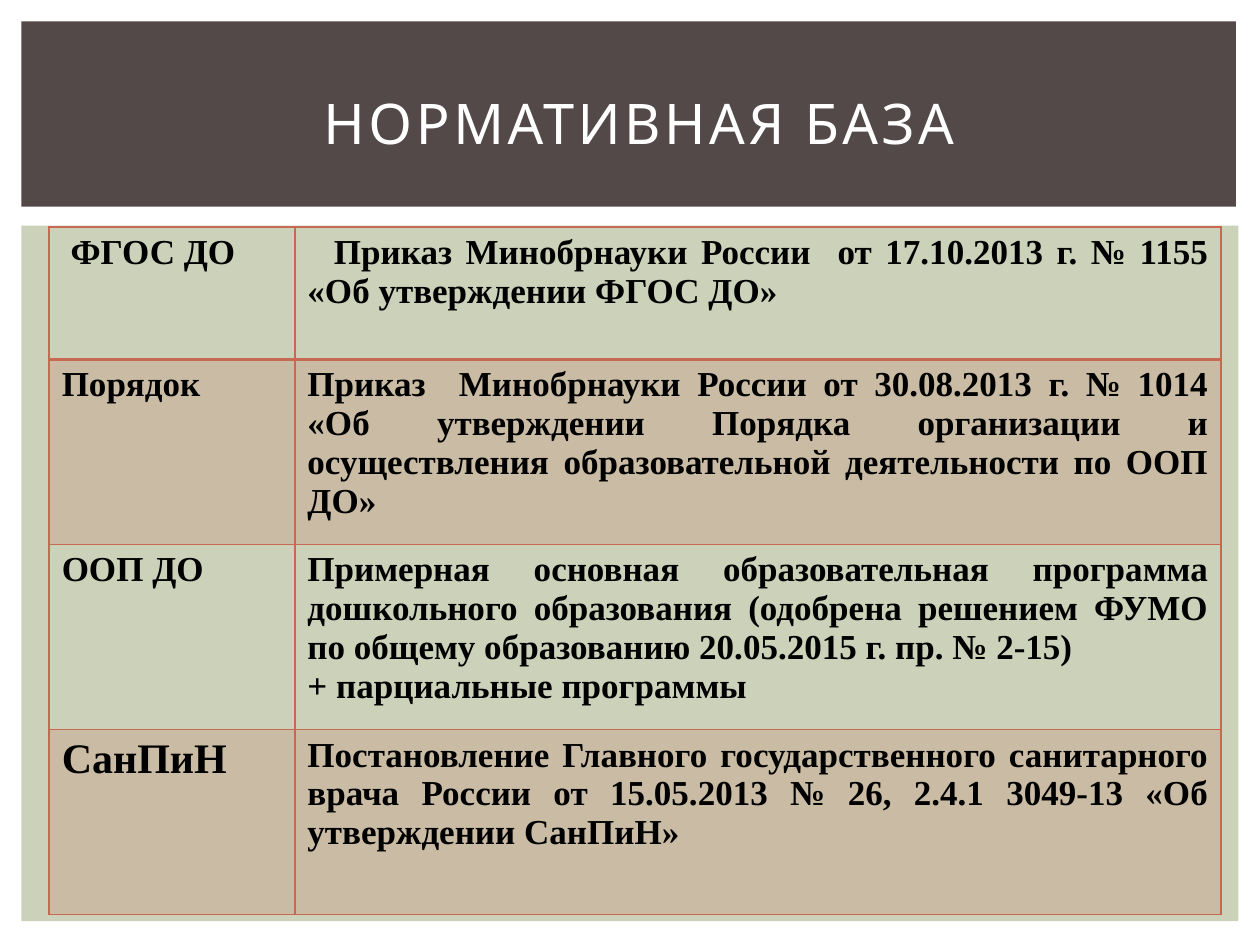
import pptx
import pptx.dml.color
import pptx.enum.shapes
import pptx.enum.text
import pptx.oxml
import pptx.oxml.ns
import pptx.util
from pptx.util import Inches

COLORS = {
    "panel": "CCD1B9",
    "band": "534949",
    "accent": "C66951",
    "title": "FFFFFF",
    "text": "000000",
}
TITLE_FONT = "Karla"
TABLE_FONT = "Times New Roman"
ALIGN = pptx.enum.text.PP_ALIGN

COLUMN_WIDTHS = [1.95, 7.35]
ROW_HEIGHTS = [1.05, 1.47, 1.47, 1.47]
# Label, label size, first-line indents (label, description), description paragraphs
ROWS = [
    ("ФГОС ДО", 20, (0.07, 0.21),
     ["Приказ Минобрнауки России  от 17.10.2013 г. № 1155 «Об утверждении ФГОС ДО»"]),
    ("Порядок", 20, (0, 0),
     ["Приказ  Минобрнауки России от 30.08.2013 г. № 1014 «Об утверждении Порядка "
      "организации и осуществления образовательной деятельности по ООП ДО»"]),
    ("ООП ДО", 20, (0, 0),
     ["Примерная основная образовательная программа дошкольного образования "
      "(одобрена решением ФУМО по общему образованию 20.05.2015 г. пр. № 2-15)",
      "+ парциальные программы"]),
    ("СанПиН", 24, (0, 0),
     ["Постановление Главного государственного санитарного врача России "
      "от 15.05.2013 № 26, 2.4.1 3049-13 «Об утверждении СанПиН»"]),
]


def rgb(name):
    return pptx.dml.color.RGBColor.from_string(COLORS[name])


def format_font(font, color, **values):
    for name, value in values.items():
        setattr(font, name, value)
    font.color.rgb = rgb(color)


def add_panel(slide, box, color, order):
    """Add a plain rectangle behind the placeholders."""
    shape = slide.shapes.add_shape(
        pptx.enum.shapes.MSO_SHAPE.RECTANGLE, *map(Inches, box))
    shape.shadow.inherit = False
    shape.fill.solid()
    shape.fill.fore_color.rgb = rgb(color)
    shape.line.fill.background()
    slide.shapes._spTree.insert(2 + order, shape._element)


def add_header(slide, box):
    left, top, width, height = box
    add_panel(slide, box, "band", 1)
    title = slide.shapes.title
    places = {"left": left + 0.25, "top": top + 0.22,
              "width": width - 0.47, "height": height - 0.32}
    for name, value in places.items():
        setattr(title, name, Inches(value))
    frame = title.text_frame
    frame.text = " НОРМАТИВНАЯ БАЗА"
    frame.vertical_anchor = pptx.enum.text.MSO_ANCHOR.MIDDLE
    paragraph = frame.paragraphs[0]
    paragraph.alignment = ALIGN.CENTER
    run = paragraph.runs[0]
    format_font(run.font, "title", name=TITLE_FONT, size=pptx.util.Pt(32), bold=False)
    run._r.get_or_add_rPr().set("spc", "200")


def set_borders(cell, widths):
    properties = cell._tc.get_or_add_tcPr()
    for index, (side, width) in enumerate(widths.items()):
        properties.insert(index, pptx.oxml.parse_xml(
            f'<a:ln{side} {pptx.oxml.ns.nsdecls("a")} w="{pptx.util.Pt(width)}">'
            f'<a:solidFill><a:srgbClr val="{COLORS["accent"]}"/></a:solidFill>'
            f'</a:ln{side}>'))


def fill_cell(cell, tinted):
    if not tinted:
        cell.fill.background()
        return
    cell.fill.solid()
    cell.fill.fore_color.rgb = rgb("accent")
    color = cell._tc.tcPr.find(".//" + pptx.oxml.ns.qn("a:srgbClr"))
    color.append(pptx.oxml.parse_xml(
        f'<a:alpha {pptx.oxml.ns.nsdecls("a")} val="20000"/>'))


def write_cell(cell, lines, size, alignment, indent):
    frame = cell.text_frame
    frame.text = "\n".join(lines)
    for paragraph in frame.paragraphs:
        paragraph.alignment = alignment
        if indent:
            paragraph._p.get_or_add_pPr().set("indent", str(Inches(indent)))
        format_font(paragraph.runs[0].font, "text", name=TABLE_FONT,
                    size=pptx.util.Pt(size), bold=True)


def add_regulations(slide, box):
    left, top, width, height = box
    add_panel(slide, box, "panel", 0)
    table = slide.shapes.add_table(
        len(ROWS), len(COLUMN_WIDTHS), Inches(left + 0.22), Inches(top + 0.01),
        Inches(sum(COLUMN_WIDTHS)), Inches(sum(ROW_HEIGHTS))).table
    for column, column_width in zip(table.columns, COLUMN_WIDTHS):
        column.width = Inches(column_width)
    for index, (label, label_size, indents, description) in enumerate(ROWS):
        table.rows[index].height = Inches(ROW_HEIGHTS[index])
        label_cell, description_cell = table.rows[index].cells
        write_cell(label_cell, [label], label_size, ALIGN.LEFT, indents[0])
        write_cell(description_cell, description, 20, ALIGN.JUSTIFY, indents[1])
        # The rule under the first row is heavier
        widths = {"L": 1, "R": 1, "T": 2 if index == 1 else 1,
                  "B": 2 if index == 0 else 1}
        for cell in (label_cell, description_cell):
            fill_cell(cell, tinted=index % 2 == 1)
            set_borders(cell, widths)


def main():
    presentation = pptx.Presentation()
    presentation.slide_width = Inches(10)
    presentation.slide_height = Inches(7.5)
    slide = presentation.slides.add_slide(presentation.slide_layouts[5])
    # Table of regulations on its panel, then the title band
    add_regulations(slide, (0.17, 1.79, 9.66, 5.52))
    add_header(slide, (0.17, 0.17, 9.64, 1.47))
    presentation.save("out.pptx")


if __name__ == "__main__":
    main()
